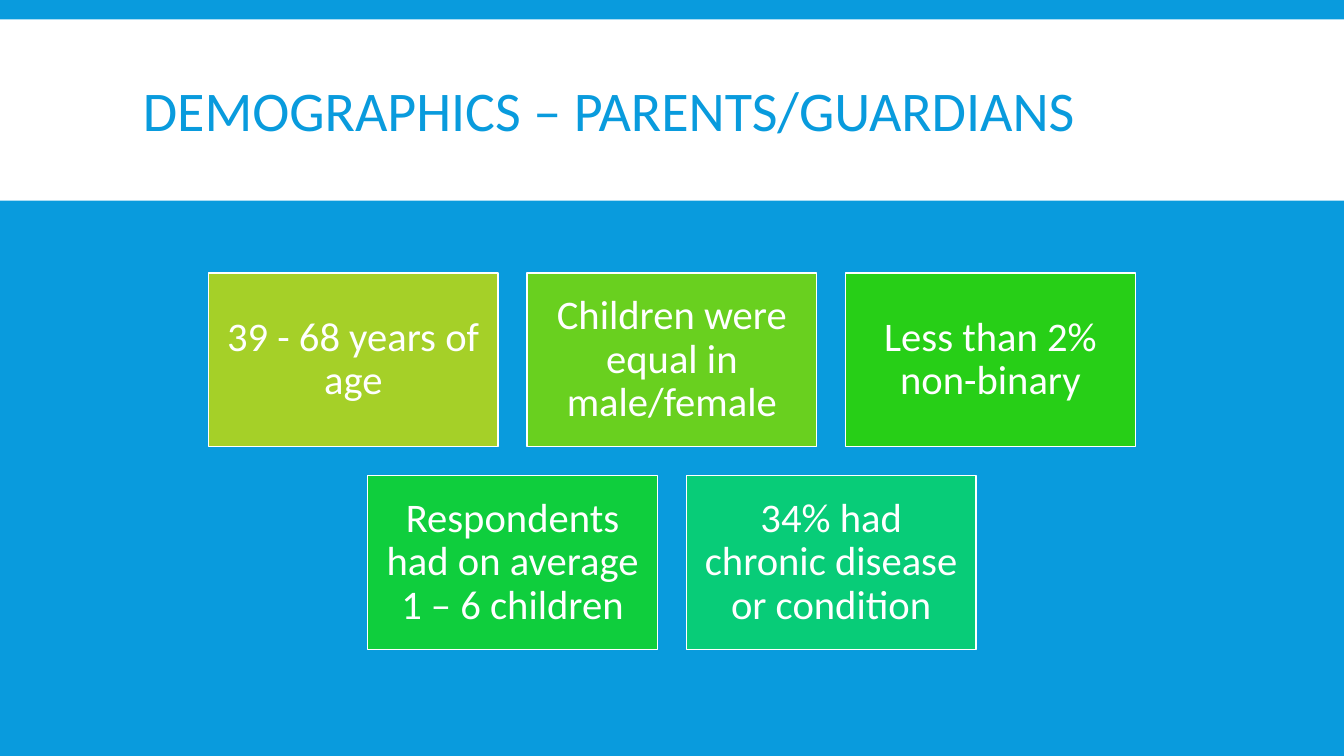
from dataclasses import dataclass

from pptx import Presentation
from pptx.dml.color import RGBColor
from pptx.enum.shapes import MSO_SHAPE
from pptx.enum.text import MSO_ANCHOR, PP_ALIGN
from pptx.shapes.autoshape import Shape
from pptx.slide import Slide
from pptx.text.text import TextFrame
from pptx.util import Cm, Pt


@dataclass(frozen=True)
class Theme:
    font: str = "Calibri"
    blue: str = "099BDD"
    white: str = "FFFFFF"
    title_size: int = 40
    card_size: int = 29
    outline: int = 1


@dataclass(frozen=True)
class Area:
    left: float
    top: float
    width: float
    height: float

    def lengths(self) -> tuple[Cm, Cm, Cm, Cm]:
        return Cm(self.left), Cm(self.top), Cm(self.width), Cm(self.height)


@dataclass(frozen=True)
class Card:
    text: str
    fill: str


THEME = Theme()
PAGE_WIDTH, PAGE_HEIGHT = 33.87, 19.05
CARD_WIDTH, CARD_HEIGHT, CARD_GAP = 7.3, 4.38, 0.73
CARDS_TOP = 6.88
CARD_INSET = 0.3

TITLE = "DEMOGRAPHICS – PARENTS/GUARDIANS"
CARD_ROWS = [
    [
        Card("39 - 68 years of age", "A5D028"),
        Card("Children were equal in male/female", "69D01F"),
        Card("Less than 2% non-binary", "27CF17"),
    ],
    [
        Card("Respondents had on average 1 – 6 children", "0FCE3D"),
        Card("34% had chronic disease or condition", "08CC78"),
    ],
]


def color(value: str) -> RGBColor:
    return RGBColor.from_string(value)


def add_rectangle(page: Slide, area: Area, fill: str) -> Shape:
    box = page.shapes.add_shape(MSO_SHAPE.RECTANGLE, *area.lengths())
    box.shadow.inherit = False
    box.fill.solid()
    box.fill.fore_color.rgb = color(fill)
    box.line.fill.background()
    return box


def write(frame: TextFrame, text: str, size: int, ink: str,
          alignment: PP_ALIGN, spacing: float) -> None:
    frame.word_wrap = True
    frame.vertical_anchor = MSO_ANCHOR.MIDDLE
    para = frame.paragraphs[0]
    para.alignment = alignment
    para.line_spacing = spacing
    span = para.add_run()
    span.text = text
    span.font.color.rgb = color(ink)
    for name, value in {"name": THEME.font, "size": Pt(size)}.items():
        setattr(span.font, name, value)


def add_card(page: Slide, card: Card, area: Area) -> None:
    box = add_rectangle(page, area, card.fill)
    box.line.color.rgb = color(THEME.white)
    box.line.width = Pt(THEME.outline)
    for side in ("left", "top", "right", "bottom"):
        setattr(box.text_frame, f"margin_{side}", Cm(CARD_INSET))
    write(box.text_frame, card.text, THEME.card_size, THEME.white,
          PP_ALIGN.CENTER, 0.9)


def add_cards(page: Slide) -> None:
    for row, cards in enumerate(CARD_ROWS):
        # Each row is centred on the page
        row_width = len(cards) * (CARD_WIDTH + CARD_GAP) - CARD_GAP
        left = (PAGE_WIDTH - row_width) / 2
        top = CARDS_TOP + row * (CARD_HEIGHT + CARD_GAP)
        for column, card in enumerate(cards):
            offset = column * (CARD_WIDTH + CARD_GAP)
            add_card(page, card, Area(left + offset, top, CARD_WIDTH, CARD_HEIGHT))


def main() -> None:
    deck = Presentation()
    deck.slide_width, deck.slide_height = Cm(PAGE_WIDTH), Cm(PAGE_HEIGHT)
    page = deck.slides.add_slide(deck.slide_layouts[6])

    # Background
    page.background.fill.solid()
    page.background.fill.fore_color.rgb = color(THEME.blue)

    # Title band
    add_rectangle(page, Area(0, 0.49, PAGE_WIDTH, 4.57), THEME.white)
    title = page.shapes.add_textbox(*Area(3.35, 0.79, 27.18, 4.19).lengths())
    write(title.text_frame, TITLE, THEME.title_size, THEME.blue,
          PP_ALIGN.LEFT, 0.85)

    # Findings
    add_cards(page)

    deck.save("out.pptx")


if __name__ == "__main__":
    main()
